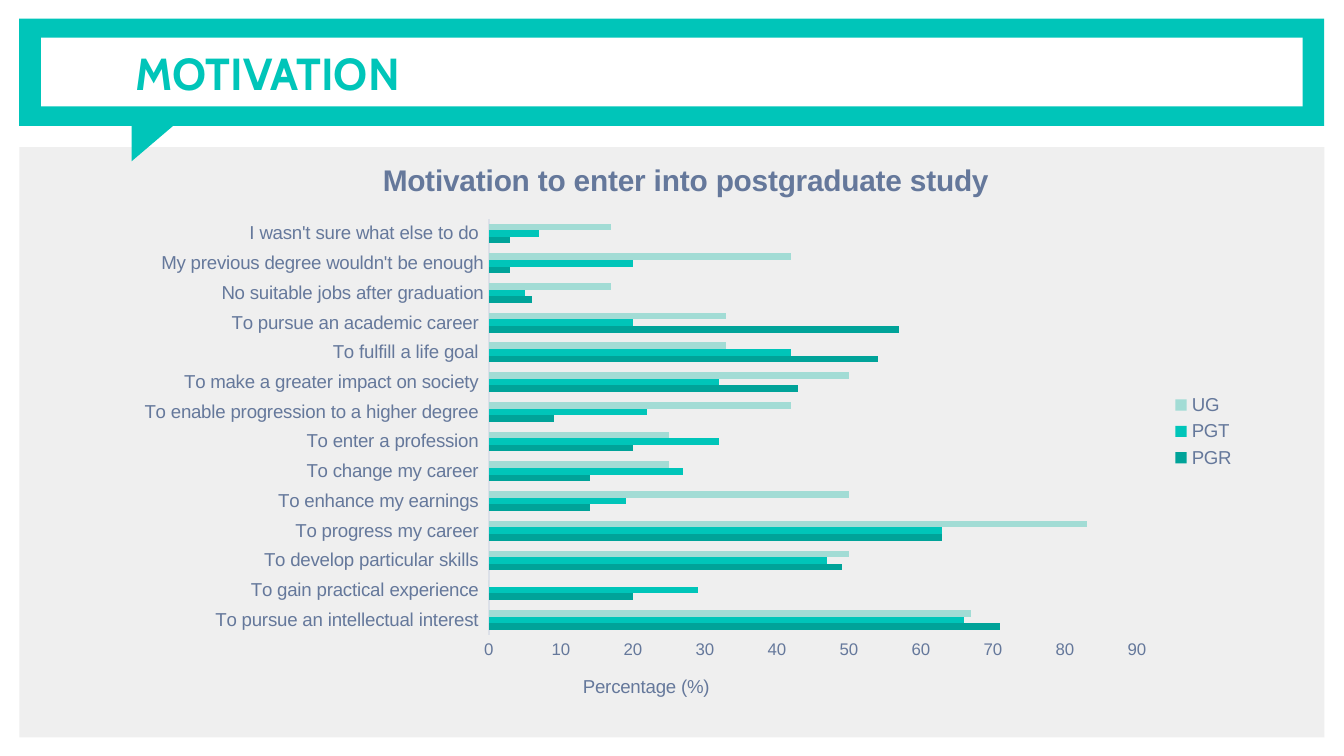
from lxml import etree
from pptx import Presentation
from pptx.chart.data import CategoryChartData
from pptx.dml.color import RGBColor
from pptx.enum.chart import XL_CHART_TYPE as ChartType, XL_LEGEND_POSITION as LegendPosition
from pptx.enum.chart import XL_TICK_MARK as TickMark
from pptx.enum.shapes import MSO_SHAPE as Shape
from pptx.enum.text import MSO_ANCHOR as Anchor
from pptx.oxml.ns import qn
from pptx.util import Inches, Pt

COLORS = {
    "teal": "00C5B9", "dark": "00A399", "pale": "A2DCD5", "panel": "EFEFEF",
    "white": "FFFFFF", "slate": "65789B", "axis": "DCE0E8",
}

presentation = Presentation()
presentation.slide_width = Inches(10)
presentation.slide_height = presentation.slide_width * 9 // 16
slide = presentation.slides.add_slide(presentation.slide_layouts[6])


def box(left, top, width, height):
    """Turn percentages of the slide's size into lengths."""
    across, down = presentation.slide_width / 100, presentation.slide_height / 100
    return int(left * across), int(top * down), int(width * across), int(height * down)


def set_layout(element, index, **percentages):
    """Place a chart part by percentages of the chart's size."""
    for old in element.findall(qn("c:layout")):
        element.remove(old)
    layout = etree.Element(qn("c:layout"))
    manual = etree.SubElement(layout, qn("c:manualLayout"))
    if index == 0:
        etree.SubElement(manual, qn("c:layoutTarget")).set("val", "inner")
    for mode in ("xMode", "yMode"):
        etree.SubElement(manual, qn(f"c:{mode}")).set("val", "edge")
    for name, percentage in percentages.items():
        etree.SubElement(manual, qn(f"c:{name}")).set("val", str(percentage / 100))
    element.insert(index, layout)


# Panel and speech-bubble banner
for preset, place, color, rotation in [
    (Shape.RECTANGLE, (1.45, 19.45, 97.1, 78.1), "panel", 0),
    (Shape.RECTANGLE, (1.43, 2.47, 97.1, 14.2), "teal", 0),
    (Shape.RIGHT_TRIANGLE, (10.1, 14.4, 3.6, 7.5), "teal", 90),
    (Shape.RECTANGLE, (3.07, 5, 93.85, 9.1), "white", 0),
]:
    shape = slide.shapes.add_shape(preset, *box(*place))
    shape.shadow.inherit = False
    shape.rotation = rotation
    shape.fill.solid()
    shape.fill.fore_color.rgb = RGBColor.from_string(COLORS[color])
    shape.line.fill.background()

heading = slide.shapes.add_textbox(*box(9.1, 2.47, 87, 14.2)).text_frame
heading.word_wrap = True
heading.vertical_anchor = Anchor.MIDDLE
heading.margin_left = heading.margin_right = Inches(0.1)
heading.margin_top = heading.margin_bottom = Inches(0.1)
heading.text = "MOTIVATION"
font = heading.paragraphs[0].runs[0].font
font.name, font.size, font.bold = "Cabin", Pt(24), True
font.color.rgb = RGBColor.from_string(COLORS["teal"])

# Survey answers, bottom of the chart first: PGR, PGT, UG
answers = {
    "To pursue an intellectual interest ": (71, 66, 67),
    "To gain practical experience ": (20, 29, 0),
    "To develop particular skills ": (49, 47, 50),
    "To progress my career ": (63, 63, 83),
    "To enhance my earnings ": (14, 19, 50),
    "To change my career ": (14, 27, 25),
    "To enter a profession ": (20, 32, 25),
    "To enable progression to a higher degree ": (9, 22, 42),
    "To make a greater impact on society ": (43, 32, 50),
    "To fulfill a life goal ": (54, 42, 33),
    "To pursue an academic career ": (57, 20, 33),
    "No suitable jobs after graduation": (6, 5, 17),
    "My previous degree wouldn't be enough": (3, 20, 42),
    "I wasn't sure what else to do ": (3, 7, 17),
}
data = CategoryChartData()
data.categories = list(answers)
for name, values in zip(("PGR", "PGT", "UG"), zip(*answers.values())):
    data.add_series(name, values)
chart = slide.shapes.add_chart(
    ChartType.BAR_CLUSTERED, *box(9.1, 18.15, 83.8, 78.1), data).chart

plot = chart.plots[0]
plot.vary_by_categories = False
plot.gap_width = 150
plot.overlap = 0
for series, color in zip(plot.series, ("dark", "teal", "pale")):
    series.format.fill.solid()
    series.format.fill.fore_color.rgb = RGBColor.from_string(COLORS[color])

category_axis, value_axis = chart.category_axis, chart.value_axis
for axis in (category_axis, value_axis):
    axis.major_tick_mark = axis.minor_tick_mark = TickMark.NONE
    axis.has_major_gridlines = False
category_axis.format.line.color.rgb = RGBColor.from_string(COLORS["axis"])
category_axis.format.line.width = Pt(0.75)
value_axis.format.line.fill.background()
value_axis.minimum_scale, value_axis.maximum_scale = 0, 90
value_axis.major_unit = 10

chart.has_legend = True
chart.legend.position = LegendPosition.RIGHT
chart.legend.include_in_layout = False
chart.chart_title.text_frame.text = "Motivation to enter into postgraduate study"
value_axis.axis_title.text_frame.text = "Percentage (%)"
title_font = chart.chart_title.text_frame.paragraphs[0].runs[0].font
axis_title_font = value_axis.axis_title.text_frame.paragraphs[0].runs[0].font
for font, size, bold in [
    (chart.font, 10, False),
    (category_axis.tick_labels.font, 10, False),
    (value_axis.tick_labels.font, 9, False),
    (chart.legend.font, 10, False),
    (title_font, 16, True),
    (axis_title_font, 10, False),
]:
    font.name, font.size, font.bold = "Arial", Pt(size), bold
    font.color.rgb = RGBColor.from_string(COLORS["slate"])

# Space within the chart
plot_area = chart.element.find(".//" + qn("c:plotArea"))
legend = chart.element.find(".//" + qn("c:legend"))
set_layout(plot_area, 0, x=32.55, y=13.8, w=57.55, h=70.5)
set_layout(chart.element.find(".//" + qn("c:title")), 1, x=22.65, y=3.15)
set_layout(plot_area.find(".//" + qn("c:title")), 1, x=40.6, y=90.5)
set_layout(legend, 1, x=92.5, y=42.7, w=7, h=14.3)

presentation.save("out.pptx")
